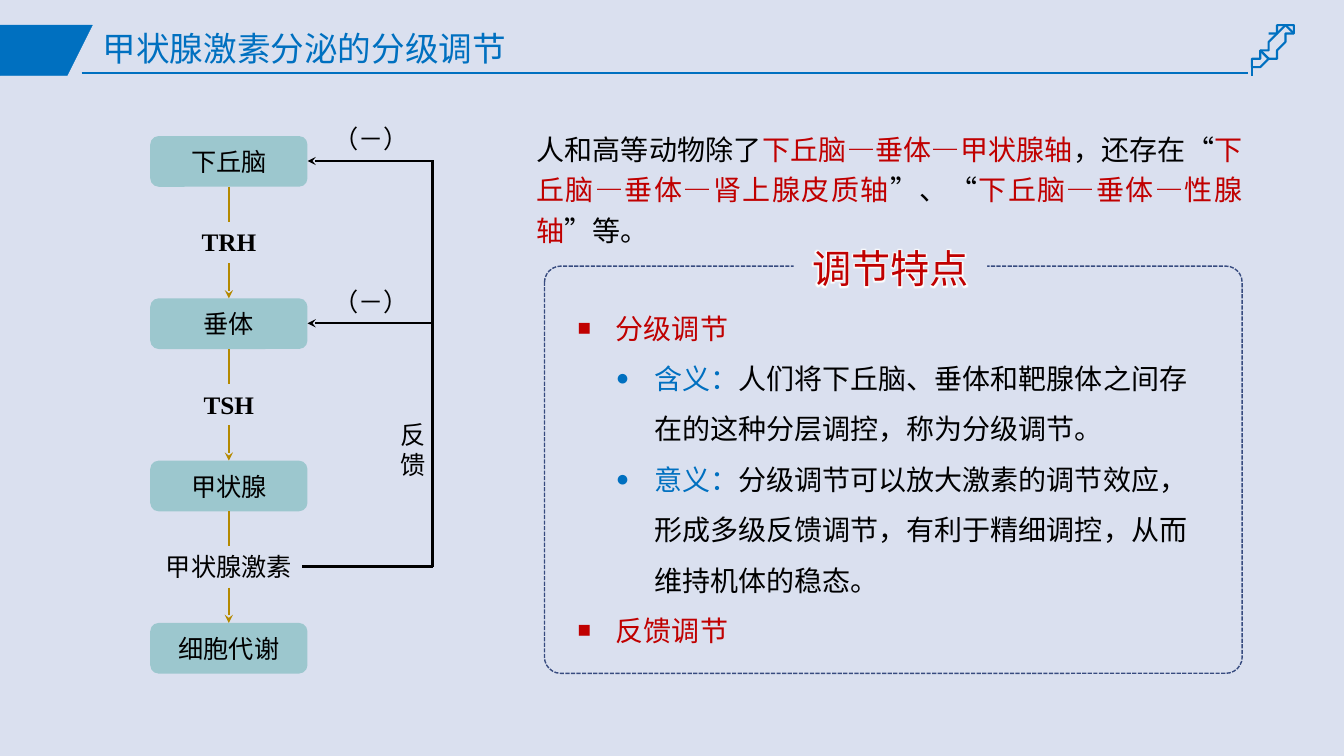
from lxml.etree import SubElement
from pptx import Presentation
from pptx.dml.color import RGBColor
from pptx.enum.dml import MSO_LINE
from pptx.enum.lang import MSO_LANGUAGE_ID
from pptx.enum.shapes import MSO_CONNECTOR, MSO_SHAPE
from pptx.enum.text import MSO_ANCHOR, PP_ALIGN
from pptx.oxml import parse_xml
from pptx.oxml.ns import qn
from pptx.util import Inches, Pt

WIDTH, HEIGHT = Inches(13.33), Inches(7.5)
COLS, ROWS = 160, 90
CELL = HEIGHT / ROWS
SANS, SERIF = "Noto Sans CJK SC", "Times New Roman"
COLORS = {
    "back": "DAE0EF", "blue": "0070C0", "red": "C00000", "black": "000000",
    "teal": "9CC7CE", "gold": "B48900", "navy": "374B7F", "white": "FFFFFF",
}
BOX_X, BOX_Y, BOX_W, BOX_H, STEP = 17.88, 16.2, 18.72, 6.04, 19.32
MID_X, LOOP_X = BOX_X + BOX_W / 2, 51.48
INDENT = 4.56


def span(cells):
    return round(cells * CELL)


def color(name):
    return RGBColor.from_string(COLORS[name])


def paint(shape, fill=None, line=None, width=1.5):
    shape.shadow.inherit = False
    if fill:
        shape.fill.solid()
        shape.fill.fore_color.rgb = color(fill)
    else:
        shape.fill.background()
    if line:
        shape.line.color.rgb = color(line)
        shape.line.width = Pt(width)
    else:
        shape.line.fill.background()


def add_run(para, words, size, font, hue, bold, glow):
    run = para.add_run()
    run.text = words
    run.font.size, run.font.bold = Pt(size), bold
    run.font.color.rgb = color(hue)
    run.font.name = font
    run.font.language_id = MSO_LANGUAGE_ID.SIMPLIFIED_CHINESE
    props = run.font._element
    SubElement(props, qn("a:ea")).set("typeface", SANS)
    if glow:
        props.insert(1, parse_xml(
            '<a:effectLst xmlns:a="http://schemas.openxmlformats.org/drawingml/2006/main">'
            f'<a:glow rad="50800"><a:srgbClr val="{COLORS[glow]}"/></a:glow></a:effectLst>'))


def add_bullet(para, mark, level):
    para.level = level
    props = para._p.get_or_add_pPr()
    props.set("marL", str(span(INDENT * (level + 1))))
    props.set("indent", str(-span(INDENT)))
    SubElement(props, qn("a:buSzPct")).set("val", "80000")
    SubElement(props, qn("a:buFont")).set("typeface", SERIF)
    SubElement(props, qn("a:buChar")).set("char", mark)


def write(shape, paras, size=18, font=SANS, hue="black", bold=False, align=PP_ALIGN.LEFT,
          anchor=MSO_ANCHOR.TOP, space=None, wrap=True, marks=(), glow=None):
    frame = shape.text_frame
    frame.word_wrap, frame.vertical_anchor = wrap, anchor
    for i, parts in enumerate(paras):
        para = frame.add_paragraph() if i else frame.paragraphs[0]
        para.alignment = align
        if space:
            para.line_spacing = space
        if marks:
            add_bullet(para, *marks[i])
        for words, tint in parts:
            add_run(para, words, size, font, tint or hue, bold, glow)


def add_text(slide, x, y, w, h, paras, **style):
    if isinstance(paras, str):
        paras = [[(paras, None)]]
    shape = slide.shapes.add_textbox(span(x), span(y), span(w), span(h))
    write(shape, paras, **style)


def add_box(slide, kind, x, y, w, h, **look):
    shape = slide.shapes.add_shape(kind, span(x), span(y), span(w), span(h))
    paint(shape, **look)
    return shape


def add_line(slide, x1, y1, x2, y2, hue="black", arrow=None):
    line = slide.shapes.add_connector(
        MSO_CONNECTOR.STRAIGHT, span(x1), span(y1), span(x2), span(y2))
    line.line.color.rgb = color(hue)
    line.line.width = Pt(1.5)
    if arrow:
        SubElement(line.line._get_or_add_ln(), qn("a:" + arrow)).set("type", "stealth")
    SubElement(line._element.spPr, qn("a:effectLst"))


def add_form(slide, strokes, **look):
    pen = slide.shapes.build_freeform(*strokes[0][0], scale=CELL)
    for i, stroke in enumerate(strokes):
        if i:
            pen.move_to(*stroke[0])
        pen.add_line_segments(stroke[1:], close=False)
    paint(pen.convert_to_shape(), **look)


def curve(*knots, count=10):
    def point(t):
        shares = ((1 - t) ** 3, 3 * t * (1 - t) ** 2, 3 * t * t * (1 - t), t ** 3)
        return tuple(sum(s * k[i] for s, k in zip(shares, knots)) for i in (0, 1))
    return [point(i / count) for i in range(count + 1)]


def add_header(slide):
    add_form(slide, [[(0, 2.69), (10.67, 2.69), (8.31, 8.71), (0, 8.71), (0, 2.69)]],
             fill="blue", line="blue", width=0.25)
    add_line(slide, 9.72, 8.71, 148.56, 8.71, hue="blue")
    barrel = (curve((153.72, 3), (153.48, 2.76), (152.16, 3.6), (150.84, 5.16))
              + curve((150.84, 5.16), (149.76, 6.36), (149.04, 7.44), (148.92, 8.04))
              + curve((149.28, 8.4), (149.76, 8.28), (150.84, 7.44), (151.92, 6.24))
              + curve((151.92, 6.24), (153.24, 4.8), (154.08, 3.36), (153.72, 3)))
    clip = [(153.6, 3.84)] + curve((153, 3.12), (153, 3.12), (152.4, 2.64), (150.96, 4.32))
    add_form(slide, [barrel, clip, [(150.84, 7.2), (150, 6.24)],
                     [(150.24, 6), (151.08, 6.96)], [(149.04, 8.28), (148.8, 8.64)]],
             line="blue")
    add_text(slide, 11.04, 2.52, 138, 7.08, "甲状腺激素分泌的分级调节", size=24, font=SERIF,
             hue="blue", anchor=MSO_ANCHOR.MIDDLE, space=0.9)


def add_flow(slide):
    organs = ["下丘脑", "垂体", "甲状腺", "细胞代谢"]
    signals = [("TRH", True), ("TSH", True), ("甲状腺激素", False)]
    for i, organ in enumerate(organs):
        box = add_box(slide, MSO_SHAPE.ROUNDED_RECTANGLE, BOX_X, BOX_Y + i * STEP,
                      BOX_W, BOX_H, fill="teal")
        write(box, [[(organ, None)]], align=PP_ALIGN.CENTER, anchor=MSO_ANCHOR.MIDDLE)
    for i, (signal, bold) in enumerate(signals):
        top = BOX_Y + i * STEP
        add_line(slide, MID_X, top + BOX_H, MID_X, top + 10.2, hue="gold")
        add_text(slide, BOX_X, top + 10.2, BOX_W, 4.85, signal, font=SERIF, bold=bold,
                 align=PP_ALIGN.CENTER, wrap=False)
        add_line(slide, MID_X, top + 15.12, MID_X, top + STEP, hue="gold", arrow="tailEnd")


def add_loop(slide):
    foot = BOX_Y + 2 * STEP + 12.6
    for i in range(2):
        y = BOX_Y + i * STEP + BOX_H / 2 - 0.05
        add_line(slide, BOX_X + BOX_W, y, LOOP_X, y, arrow="headEnd")
        add_text(slide, 38.52, y - 5.05, 11.52, 4.85, "（－）", wrap=False)
    add_line(slide, 36, foot, LOOP_X, foot)
    add_line(slide, LOOP_X, foot + 0.1, LOOP_X, BOX_Y + BOX_H / 2 - 0.15)
    add_text(slide, 46.44, 49.32, 5.28, 8.52, "反馈")


def add_notes(slide):
    add_text(slide, 62.64, 14.4, 86.4, 10.56, [[
        ("人和高等动物除了", None), ("下丘脑—垂体—甲状腺轴", "red"), ("，还存在“", None),
        ("下丘脑—垂体—肾上腺皮质轴", "red"), ("”、“", None),
        ("下丘脑—垂体—性腺轴", "red"), ("”等。", None),
    ]], size=20, align=PP_ALIGN.JUSTIFY, space=1.2)
    panel = add_box(slide, MSO_SHAPE.ROUNDED_RECTANGLE, 64.8, 31.68, 83.04, 48.48,
                    line="navy", width=1)
    panel.adjustments[0] = 0.04
    panel.line.dash_style = MSO_LINE.SQUARE_DOT
    tag = add_box(slide, MSO_SHAPE.RECTANGLE, 94.44, 28.44, 23.04, 6.84, fill="back")
    write(tag, [[("调节特点", None)]], size=28, font=SERIF, hue="red",
          align=PP_ALIGN.CENTER, glow="white")
    add_text(slide, 67.56, 34.44, 77.04, 42.96, [
        [("分级调节", "red")],
        [("含义：", "blue"),
         ("人们将下丘脑、垂体和靶腺体之间存在的这种分层调控，称为分级调节。", None)],
        [("意义：", "blue"),
         ("分级调节可以放大激素的调节效应，形成多级反馈调节，有利于精细调控，"
          "从而维持机体的稳态。", None)],
        [("反馈调节", "red")],
    ], size=20, space=1.5, marks=[("■", 0), ("●", 1), ("●", 1), ("■", 0)])


def main():
    deck = Presentation()
    deck.slide_width, deck.slide_height = WIDTH, HEIGHT
    slide = deck.slides.add_slide(deck.slide_layouts[6])
    add_box(slide, MSO_SHAPE.RECTANGLE, 0, 0, COLS, ROWS, fill="back")
    add_header(slide)
    add_notes(slide)
    add_flow(slide)
    add_loop(slide)
    deck.save("out.pptx")


if __name__ == "__main__":
    main()
